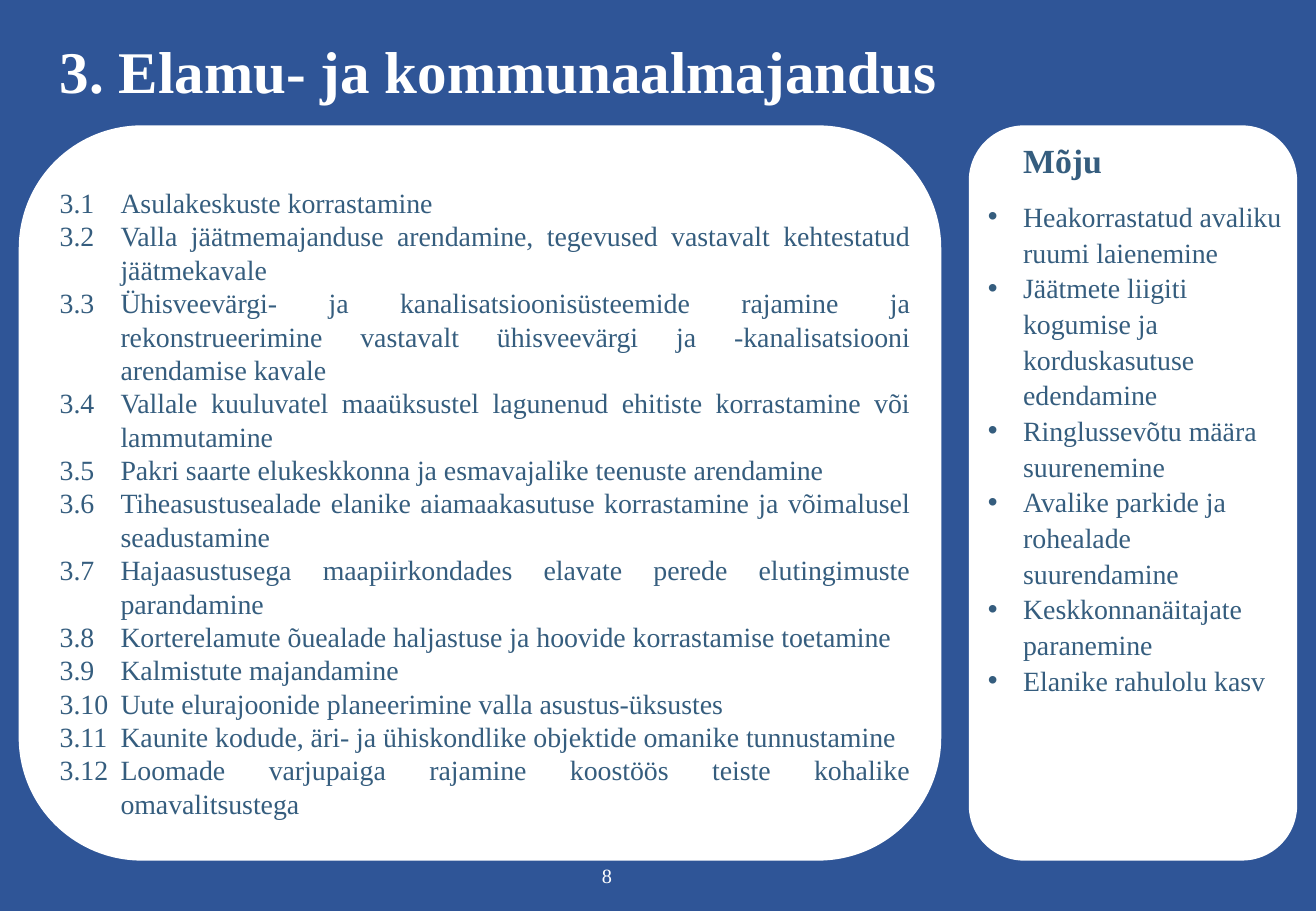
from lxml import etree
from pptx import Presentation
from pptx.dml.color import RGBColor
from pptx.enum.shapes import MSO_SHAPE
from pptx.enum.text import MSO_ANCHOR, PP_ALIGN
from pptx.oxml.ns import qn
from pptx.util import Cm, Pt

ROUNDED = MSO_SHAPE.ROUNDED_RECTANGLE
MIDDLE = MSO_ANCHOR.MIDDLE
LEFT, CENTER, JUSTIFY = PP_ALIGN.LEFT, PP_ALIGN.CENTER, PP_ALIGN.JUSTIFY

TITLE = "3. Elamu- ja kommunaalmajandus"
CHAPTER = 3
ACTIONS = [
    "Asulakeskuste korrastamine",
    "Valla jäätmemajanduse arendamine, tegevused vastavalt kehtestatud jäätmekavale",
    "Ühisveevärgi- ja kanalisatsioonisüsteemide rajamine ja rekonstrueerimine "
    "vastavalt ühisveevärgi ja -kanalisatsiooni arendamise kavale",
    "Vallale kuuluvatel maaüksustel lagunenud ehitiste korrastamine või lammutamine",
    "Pakri saarte elukeskkonna ja esmavajalike teenuste arendamine",
    "Tiheasustusealade elanike aiamaakasutuse korrastamine ja võimalusel seadustamine",
    "Hajaasustusega maapiirkondades elavate perede elutingimuste parandamine",
    "Korterelamute õuealade haljastuse ja hoovide korrastamise toetamine",
    "Kalmistute majandamine",
    "Uute elurajoonide planeerimine valla asustus-üksustes",
    "Kaunite kodude, äri- ja ühiskondlike objektide omanike tunnustamine",
    "Loomade varjupaiga rajamine koostöös teiste kohalike omavalitsustega",
]
IMPACT_HEADING = "Mõju"
IMPACTS = [
    "Heakorrastatud avaliku ruumi laienemine",
    "Jäätmete liigiti kogumise ja korduskasutuse edendamine",
    "Ringlussevõtu määra suurenemine",
    "Avalike parkide ja rohealade suurendamine",
    "Keskkonnanäitajate paranemine",
    "Elanike rahulolu kasv",
]
PAGE_NUMBER = "8"

THEME = {
    "font": "Times New Roman",
    "background": RGBColor(0x2F, 0x55, 0x97),
    "panel": RGBColor(0xFF, 0xFF, 0xFF),
    "ink": RGBColor(0x35, 0x5D, 0x7E),
    "title": Pt(35),
    "heading": Pt(20),
    "body": Pt(16.5),
    "number": Pt(12),
}

# left, top, width, height in centimetres
PAGE_SIZE = (27.51, 19.05)
PANEL_TOP, PANEL_HEIGHT = 2.64, 15.34
ACTION_PANEL = (0.41, PANEL_TOP, 19.25, PANEL_HEIGHT)
IMPACT_PANEL = (20.27, PANEL_TOP, 6.83, PANEL_HEIGHT)
ACTION_TEXT = (0.89, 3.68, 18.26, 13.67)
IMPACT_TEXT = (20.27, PANEL_TOP, 6.83, 12.22)
TITLE_TEXT = (1.12, 0.74, 25.25, 1.65)
NUMBER_TEXT = (12.45, 17.93, 0.48, 0.76)
INSET = 0.13


def set_all(target, values):
    for name, value in values.items():
        setattr(target, name, value)


def add_panel(page, place):
    panel = page.shapes.add_shape(ROUNDED, *map(Cm, place))
    panel.shadow.inherit = False
    panel.fill.solid()
    panel.fill.fore_color.rgb = THEME["panel"]
    panel.line.color.rgb = THEME["panel"]
    panel.line.width = Pt(1)


def add_text(page, place, paragraphs, wrap=True):
    """Add a text box; each paragraph is a dict of format values."""
    frame = page.shapes.add_textbox(*map(Cm, place)).text_frame
    margins = {f"margin_{side}": Cm(INSET) for side in ("left", "right", "top", "bottom")}
    set_all(frame, {"word_wrap": wrap, "vertical_anchor": MIDDLE, **margins})
    for position, content in enumerate(paragraphs):
        para = frame.add_paragraph() if position else frame.paragraphs[0]
        set_all(para, content.get("layout", {}))
        span = para.add_run()
        span.text = content["text"]
        set_all(span.font, {"name": THEME["font"], "size": THEME[content["size"]],
                            "bold": content.get("bold", False)})
        span.font.color.rgb = THEME[content["color"]]
        set_indent(para, *content.get("indent", (0, 0)))
        if content.get("bullet"):
            set_bullet(para)


def set_indent(para, margin, first_line):
    properties = para._p.get_or_add_pPr()
    properties.set("marL", str(Cm(margin)))
    properties.set("indent", str(Cm(first_line)))


def set_bullet(para):
    properties = para._p.get_or_add_pPr()
    etree.SubElement(properties, qn("a:buFont"), typeface="Arial")
    etree.SubElement(properties, qn("a:buChar"), char="•")


def main():
    deck = Presentation()
    deck.slide_width, deck.slide_height = map(Cm, PAGE_SIZE)
    page = deck.slides.add_slide(deck.slide_layouts[6])
    page.background.fill.solid()
    page.background.fill.fore_color.rgb = THEME["background"]

    body = {"size": "body", "color": "ink"}
    actions = [{**body, "text": f"{CHAPTER}.{number}\t{action}", "indent": (1.5, -1.27),
                "layout": {"alignment": JUSTIFY}}
               for number, action in enumerate(ACTIONS, 1)]
    heading = {"text": IMPACT_HEADING, "size": "heading", "color": "ink", "bold": True,
               "indent": (0.99, 0), "layout": {"alignment": LEFT, "space_after": Pt(10)}}
    impacts = [{**body, "text": impact, "indent": (0.99, -0.74), "bullet": True,
                "layout": {"alignment": LEFT, "line_spacing": 1.07}}
               for impact in IMPACTS]
    title = {"text": TITLE, "size": "title", "color": "panel", "bold": True,
             "layout": {"line_spacing": 0.9}}
    number = {"text": PAGE_NUMBER, "size": "number", "color": "panel",
              "layout": {"alignment": CENTER}}

    add_panel(page, ACTION_PANEL)
    add_text(page, ACTION_TEXT, actions)
    add_panel(page, IMPACT_PANEL)
    add_text(page, IMPACT_TEXT, [heading, *impacts])
    add_text(page, TITLE_TEXT, [title])
    add_text(page, NUMBER_TEXT, [number], wrap=False)
    deck.save("out.pptx")


if __name__ == "__main__":
    main()
